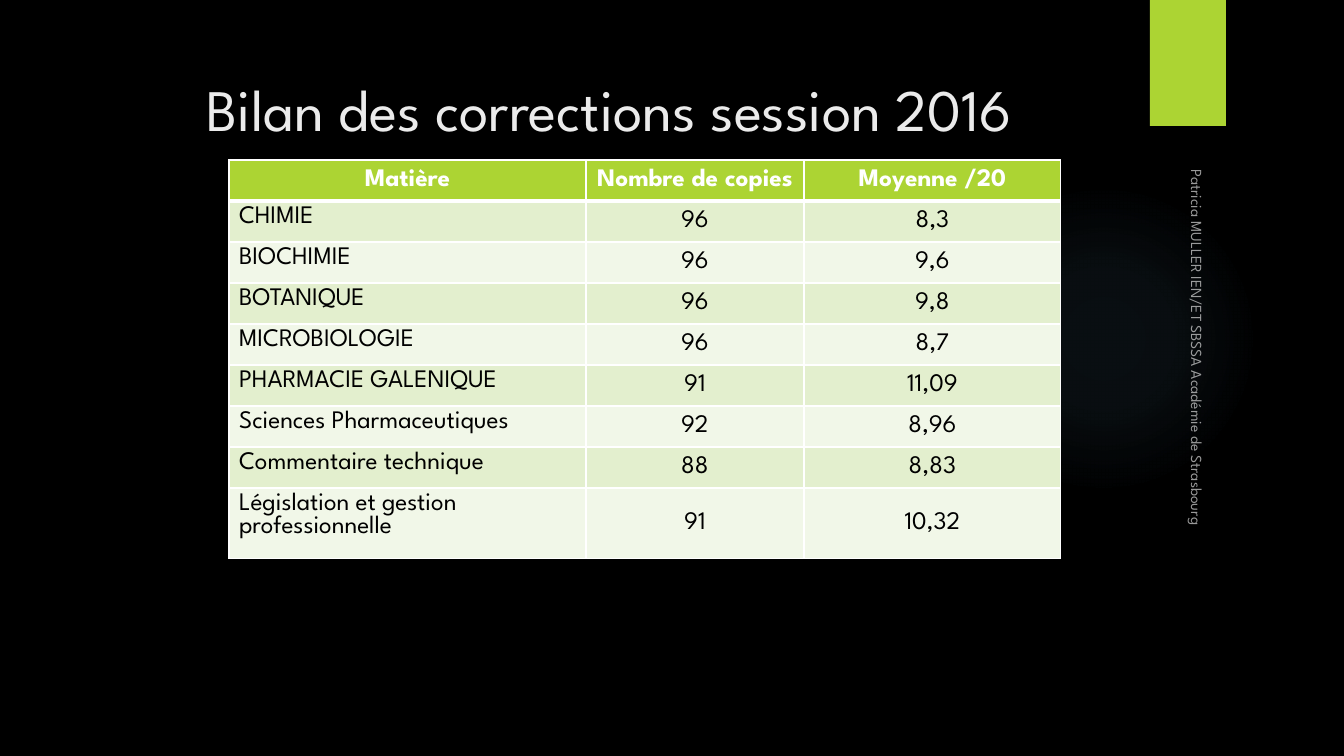
from dataclasses import dataclass

from lxml.etree import SubElement
from pptx import Presentation
from pptx.dml.color import RGBColor
from pptx.enum.shapes import MSO_SHAPE as Shape
from pptx.enum.text import MSO_ANCHOR as Anchor, PP_ALIGN as Align
from pptx.oxml.ns import qn
from pptx.util import Pt

EMU_PER_PX = 914400 / 100.8


@dataclass(frozen=True)
class Theme:
    font: str = "League Spartan"
    background: str = "000000"
    accent: str = "ACD433"
    glow: str = "7AC4F0"
    title: str = "EBEBEB"
    light: str = "FFFFFF"
    dark: str = "000000"
    bands: tuple = ("E3EFCE", "F1F7E8")
    title_size: int = 42
    table_size: int = 18
    footer_size: int = 11


def px(n):
    return round(n * EMU_PER_PX)


def box(*lengths):
    return [px(n) for n in lengths]


def paint(fill, color):
    fill.solid()
    fill.fore_color.rgb = RGBColor.from_string(color)


def add_color(parent, color, alpha):
    clr = SubElement(parent, qn("a:srgbClr"), val=color)
    SubElement(clr, qn("a:alpha"), val=str(alpha * 1000))


def write(tf, text, *, font, size, color, bold=False, align=Align.LEFT, alpha=100):
    p = tf.paragraphs[0]
    p.alignment = align
    r = p.add_run()
    r.text = text
    r.font.name = font
    r.font.size = Pt(size)
    r.font.bold = bold
    paint(r.font.fill, color)
    if alpha < 100:
        solid = r.font._element.find(qn("a:solidFill"))
        solid.clear()
        add_color(solid, color, alpha)


class SlideBuilder:
    def __init__(self, prs, theme):
        self.theme = theme
        self.s = prs.slides.add_slide(prs.slide_layouts[6])
        paint(self.s.background.fill, theme.background)

    def shape(self, kind, at, color):
        sp = self.s.shapes.add_shape(kind, *box(*at))
        sp.shadow.inherit = False
        sp.line.fill.background()
        paint(sp.fill, color)
        return sp

    def glow(self, at, color, stops):
        sp = self.shape(Shape.OVAL, at, color)
        solid = sp._element.spPr.find(qn("a:solidFill"))
        grad = SubElement(sp._element.spPr, qn("a:gradFill"), rotWithShape="1")
        solid.getparent().replace(solid, grad)
        gs_lst = SubElement(grad, qn("a:gsLst"))
        for pos, alpha in stops:
            gs = SubElement(gs_lst, qn("a:gs"), pos=str(pos * 1000))
            add_color(gs, color, alpha)
        circle = SubElement(grad, qn("a:path"), path="circle")
        SubElement(circle, qn("a:fillToRect"), {side: "50000" for side in "ltrb"})

    def text(self, at, text, *, anchor=Anchor.TOP, rotation=0, inset_top=5, **fmt):
        sp = self.s.shapes.add_textbox(*box(*at))
        sp.rotation = rotation
        tf = sp.text_frame
        tf.word_wrap = True
        tf.vertical_anchor = anchor
        tf.margin_top = px(inset_top)
        write(tf, text, font=self.theme.font, **fmt)

    def border(self, cell, **widths):
        tc_pr = cell._tc.get_or_add_tcPr()
        for side, width in widths.items():
            ln = SubElement(tc_pr, qn(f"a:ln{side}"), w=str(Pt(width)))
            add_color(SubElement(ln, qn("a:solidFill")), self.theme.light, 100)

    def table(self, left, top, widths, row_height, rows):
        th = self.theme
        size = (sum(widths), row_height * len(rows))
        table = self.s.shapes.add_table(
            len(rows), len(widths), *box(left, top, *size)).table
        for col, width in zip(table.columns, widths):
            col.width = px(width)
        for i, row in enumerate(rows):
            table.rows[i].height = px(row_height)
            header = i == 0
            for j, value in enumerate(row):
                cell = table.cell(i, j)
                self.border(cell, L=1, R=1, T=3 if i == 1 else 1, B=3 if header else 1)
                paint(cell.fill, th.accent if header else th.bands[(i - 1) % 2])
                centred = header or j > 0
                cell.vertical_anchor = Anchor.MIDDLE if centred else Anchor.TOP
                write(cell.text_frame, value, font=th.font, size=th.table_size,
                      color=th.light if header else th.dark, bold=header,
                      align=Align.CENTER if centred else Align.LEFT)


def main():
    prs = Presentation()
    prs.slide_width, prs.slide_height = box(1344, 756)
    th = Theme()
    slide = SlideBuilder(prs, th)

    slide.glow((949, 184, 310, 310), th.glow, [(0, 7), (36, 6), (69, 0)])
    slide.shape(Shape.RECTANGLE, (1150, 0, 76, 126), th.accent)
    slide.text((91, 50, 1037, 110), "Bilan des corrections session 2016", inset_top=23,
               size=th.title_size, color=th.title, align=Align.CENTER)
    slide.table(229, 160, (357, 218, 257), 41, [
        ("Matière", "Nombre de copies", "Moyenne /20"),
        ("CHIMIE", "96", "8,3"),
        ("BIOCHIMIE", "96", "9,6"),
        ("BOTANIQUE", "96", "9,8"),
        ("MICROBIOLOGIE", "96", "8,7"),
        ("PHARMACIE GALENIQUE", "91", "11,09"),
        ("Sciences Pharmaceutiques", "92", "8,96"),
        ("Commentaire technique", "88", "8,83"),
        ("Législation et gestion professionnelle", "91", "10,32"),
    ])
    slide.text((987, 356, 425, 33), "Patricia MULLER IEN/ET SBSSA Académie de Strasbourg",
               anchor=Anchor.BOTTOM, rotation=90, size=th.footer_size,
               color=th.light, alpha=60)
    prs.save("out.pptx")


if __name__ == "__main__":
    main()
